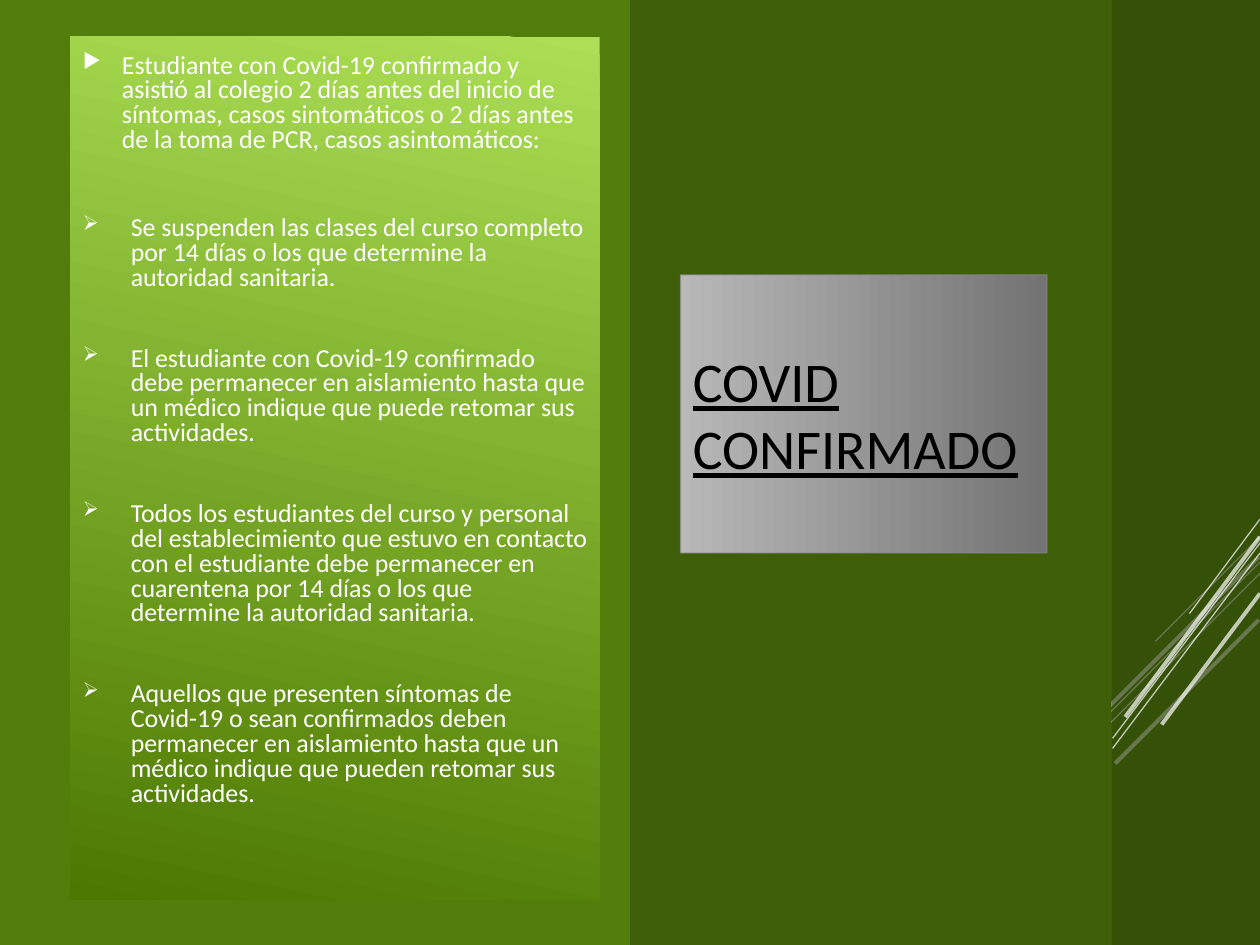
from dataclasses import dataclass

from lxml.etree import SubElement
from pptx import Presentation
from pptx.dml.color import RGBColor
from pptx.enum.shapes import MSO_CONNECTOR, MSO_SHAPE
from pptx.enum.text import MSO_ANCHOR, PP_ALIGN
from pptx.oxml.ns import qn
from pptx.util import Inches, Pt


@dataclass(frozen=True)
class Theme:
    font: str = "Calibri"
    body_size: float = 14.8
    title_size: float = 32
    background: str = "537D0B"
    middle_panel: str = "3E5E08"
    side_panel: str = "293E06"
    body_gradient: tuple = ("ACDF55", "4C7800")
    title_gradient: tuple = ("B8B8B8", "737373")
    title_border: str = "898989"
    white: str = "FFFFFF"
    black: str = "000000"


THEME = Theme()

# Bullet, indent in inches, space before in points, text
PROTOCOL = [
    ("▶", 0.31, 0, "Estudiante con Covid-19 confirmado y asistió al colegio 2 días antes "
     "del inicio de síntomas, casos sintomáticos o 2 días antes de la toma de PCR, "
     "casos asintomáticos:"),
    ("➢", 0.38, 36, "Se suspenden las clases del curso completo por 14 días o los que "
     "determine la autoridad sanitaria."),
    ("➢", 0.38, 32, "El estudiante con Covid-19 confirmado debe permanecer en aislamiento "
     "hasta que un médico indique que puede retomar sus actividades."),
    ("➢", 0.38, 32, "Todos los estudiantes del curso y personal del establecimiento que "
     "estuvo en contacto con el estudiante debe permanecer en cuarentena por 14 días o "
     "los que determine la autoridad sanitaria."),
    ("➢", 0.38, 32, "Aquellos que presenten síntomas de Covid-19 o sean confirmados deben "
     "permanecer en aislamiento hasta que un médico indique que pueden retomar sus "
     "actividades."),
]

# Start x, start y, end x, end y in inches, width in points
BACK_STREAKS = [
    (10, 4.26, 9.17, 5.09, 0.75),
    (10, 4.46, 7.3, 7.17, 0.75),
    (10, 4.55, 8.28, 6.27, 0.75),
    (9.99, 4.42, 8.42, 5.99, 2.25),
    (9.99, 4.92, 8.85, 6.06, 2.25),
]
FRONT_STREAKS = [
    (10, 4.12, 9.44, 4.87, 0.75),
    (10, 4.31, 8.83, 5.86, 0.75),
    (10, 4.39, 8.83, 5.94, 0.75),
    (10, 4.26, 8.93, 5.69, 2.25),
    (10, 4.71, 9.22, 5.75, 2.25),
]


def set_solid(fill, color, opacity=100):
    fill.solid()
    fill.fore_color.rgb = RGBColor.from_string(color)
    if opacity < 100:
        color_element = fill._xPr.find(qn("a:solidFill"))[0]
        SubElement(color_element, qn("a:alpha"), val=str(opacity * 1000))


def set_gradient(fill, colors, angle):
    fill.gradient()
    fill.gradient_angle = angle
    for stop, color in zip(fill.gradient_stops, colors):
        stop.color.rgb = RGBColor.from_string(color)


def add_rectangle(slide, left, top, width, height):
    shape = slide.shapes.add_shape(
        MSO_SHAPE.RECTANGLE, Inches(left), Inches(top), Inches(width), Inches(height))
    shape.shadow.inherit = False
    shape.line.fill.background()
    return shape


def add_streaks(slide, streaks, opacity=100):
    for start_x, start_y, end_x, end_y, width in streaks:
        streak = slide.shapes.add_connector(
            MSO_CONNECTOR.STRAIGHT,
            Inches(start_x), Inches(start_y), Inches(end_x), Inches(end_y))
        streak.line.width = Pt(width)
        set_solid(streak.line.fill, THEME.white, opacity)
        SubElement(streak._element.spPr, qn("a:effectLst"))


def style_font(font, size, color):
    font.name = THEME.font
    font.size = Pt(size)
    font.color.rgb = RGBColor.from_string(color)


def set_bullet(paragraph, character, indent):
    properties = paragraph._p.get_or_add_pPr()
    properties.set("marL", str(Inches(indent)))
    properties.set("indent", str(-Inches(indent)))
    bullet_color = SubElement(properties, qn("a:buClr"))
    SubElement(bullet_color, qn("a:srgbClr"), val=THEME.white)
    SubElement(properties, qn("a:buSzPct"), val="80000")
    SubElement(properties, qn("a:buChar"), char=character)


def add_protocol(slide):
    shape = add_rectangle(slide, 0.56, 0.29, 4.2, 6.85)
    set_gradient(shape.fill, THEME.body_gradient, 258)
    frame = shape.text_frame
    frame.word_wrap = True
    frame.vertical_anchor = MSO_ANCHOR.TOP
    frame.margin_top = Inches(0.14)
    frame.text = "\n".join(text for *_, text in PROTOCOL)
    for paragraph, (bullet, indent, space, _) in zip(frame.paragraphs, PROTOCOL):
        set_bullet(paragraph, bullet, indent)
        paragraph.alignment = PP_ALIGN.LEFT
        paragraph.line_spacing = 0.8
        paragraph.space_before = Pt(space)
        style_font(paragraph.runs[0].font, THEME.body_size, THEME.white)


def add_title(slide):
    shape = add_rectangle(slide, 5.4, 2.18, 2.91, 2.21)
    set_gradient(shape.fill, THEME.title_gradient, 0)
    set_solid(shape.line.fill, THEME.title_border, 60)
    shape.line.width = Pt(0.75)
    frame = shape.text_frame
    frame.word_wrap = True
    frame.vertical_anchor = MSO_ANCHOR.MIDDLE
    frame.text = "COVID CONFIRMADO"
    paragraph = frame.paragraphs[0]
    paragraph.alignment = PP_ALIGN.LEFT
    font = paragraph.runs[0].font
    style_font(font, THEME.title_size, THEME.black)
    font.underline = True


def main():
    presentation = Presentation()
    presentation.slide_width = Inches(10)
    presentation.slide_height = Inches(7.5)
    slide = presentation.slides.add_slide(presentation.slide_layouts[6])
    set_solid(slide.background.fill, THEME.background)

    add_streaks(slide, BACK_STREAKS)
    add_protocol(slide)
    set_solid(add_rectangle(slide, 5, 0, 3.82, 7.5).fill, THEME.middle_panel)
    add_title(slide)
    set_solid(add_rectangle(slide, 8.82, 0, 1.18, 7.5).fill, THEME.side_panel, 70)
    add_streaks(slide, FRONT_STREAKS, 70)
    presentation.save("out.pptx")


if __name__ == "__main__":
    main()
